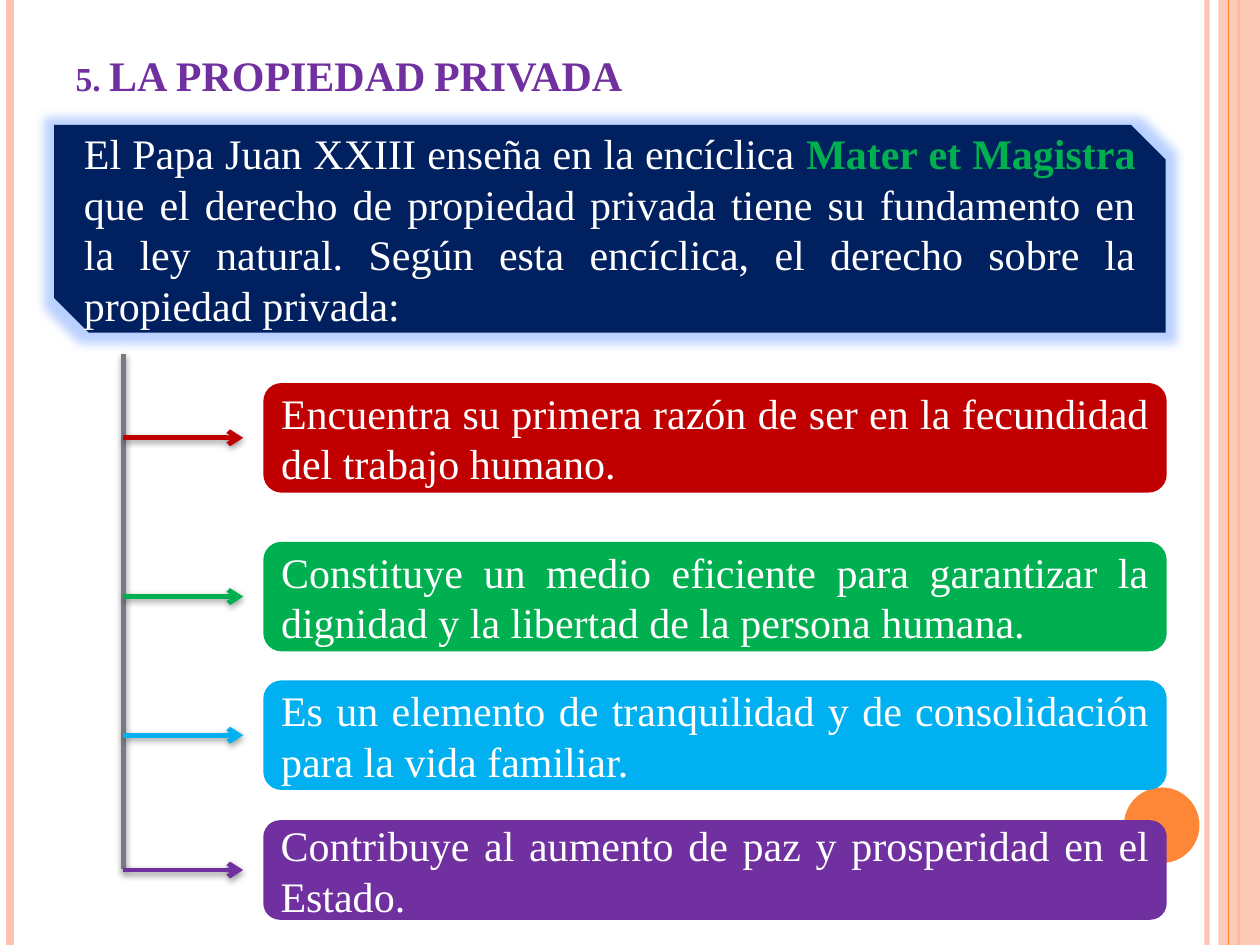
import pptx
import pptx.util
import pptx.dml.color
import pptx.enum.shapes
import pptx.enum.text
import pptx.oxml.ns
from lxml import etree

RGB = pptx.dml.color.RGBColor
FORM = pptx.enum.shapes.MSO_SHAPE
ALIGN = pptx.enum.text.PP_ALIGN
ANCHOR = pptx.enum.text.MSO_ANCHOR
Inches, Pt = pptx.util.Inches, pptx.util.Pt

PEACH = RGB(0xFE, 0xC3, 0xAE)
ORANGE = RGB(0xFE, 0x86, 0x37)
PURPLE = RGB(0x70, 0x30, 0xA0)
NAVY = RGB(0x00, 0x20, 0x60)
RED = RGB(0xC0, 0x00, 0x00)
GREEN = RGB(0x00, 0xB0, 0x50)
SKY = RGB(0x00, 0xB0, 0xF0)
GRAY = RGB(0x77, 0x7C, 0x84)
WHITE = RGB(0xFF, 0xFF, 0xFF)
BLACK = RGB(0x00, 0x00, 0x00)
GLOW = RGB(0x66, 0x99, 0xFF)

WIDE, HIGH = 10, 7.5
TRUNK, TIP = 0.98, 1.93
LEFT, SPAN = 2.09, 7.17
TOP, FOOT = 2.81, 6.9

# Top, height, colour and text of each point
POINTS = [
    (3.04, 0.87, RED, "Encuentra su primera razón de ser en la fecundidad del trabajo humano."),
    (4.3, 0.87, GREEN, "Constituye un medio eficiente para garantizar la dignidad y la libertad de la persona humana."),
    (5.4, 0.87, SKY, "Es un elemento de tranquilidad y de consolidación para la vida familiar."),
    (6.51, 0.79, PURPLE, "Contribuye al aumento de paz y prosperidad en el Estado."),
]
INTRO = [
    ("El Papa Juan XXIII enseña en la encíclica ", WHITE, False),
    ("Mater et Magistra ", GREEN, True),
    ("que el derecho de propiedad privada tiene su fundamento en la ley natural. "
     "Según esta encíclica, el derecho sobre la propiedad privada:", WHITE, False),
]


def node(up, tag, **attrs):
    """Add an XML child with the given attributes."""
    kid = etree.SubElement(up, pptx.oxml.ns.qn(tag))
    for name, value in attrs.items():
        kid.set(name, str(value))
    return kid


def fade(props, share):
    """Set the opacity, in percent, of the first colour found."""
    tint = next(props.iter(pptx.oxml.ns.qn("a:srgbClr")))
    node(tint, "a:alpha", val=share * 1000)


def effect(props, tag=None, color=BLACK, share=42, **attrs):
    """Add an effect list, empty unless a tag is given."""
    group = node(props, "a:effectLst")
    if tag:
        kind = node(group, tag, **attrs)
        node(kind, "a:srgbClr", val=color)
        fade(kind, share)


def write(par, text, color, bold=False):
    run = par.add_run()
    run.text = text
    style = {"name": "Times New Roman", "size": Pt(24), "bold": bold}
    for name, value in style.items():
        setattr(run.font, name, value)
    run.font.color.rgb = color
    return run


def block(slide, form, box, color, runs=()):
    """Add a filled shape with justified text."""
    shape = slide.shapes.add_shape(form, *map(Inches, box))
    shape.fill.solid()
    shape.fill.fore_color.rgb = color
    shape.line.fill.background()
    shape.shadow.inherit = False
    if runs:
        shape.text_frame.vertical_anchor = ANCHOR.MIDDLE
        par = shape.text_frame.paragraphs[0]
        par.alignment = ALIGN.JUSTIFY
        for run in runs:
            write(par, *run)
    return shape


def rule(slide, start, end, color, width, shade=False, arrow=False):
    """Add a straight line, with a shadow or an arrowhead if asked."""
    kind = pptx.enum.shapes.MSO_CONNECTOR.STRAIGHT
    line = slide.shapes.add_connector(kind, *map(Inches, start + end))
    line.line.color.rgb = color
    line.line.width = Pt(width)
    if arrow:
        node(line.line._get_or_add_ln(), "a:tailEnd", type="arrow")
    props = line._element.spPr
    if shade:
        effect(props, "a:outerShdw", blurRad=Pt(4), dist=Pt(1.6),
               dir=90 * 60000, rotWithShape=0)
    else:
        effect(props)
    return line


def stripe(slide, x, color, width):
    return rule(slide, (x, 0), (x, HIGH), color, width)


def frame(slide):
    """Draw the side stripes and the dot."""
    fade(stripe(slide, 9.58, PEACH, 3)._element, 93)
    stripe(slide, 0.08, PEACH, 4.5)
    stripe(slide, 9.83, ORANGE, 1.5)
    band = block(slide, FORM.RECTANGLE, (9.67, 0, 0.33, HIGH), PEACH)
    fade(band._element, 87)
    stripe(slide, 9.75, ORANGE, 0.75)
    block(slide, FORM.OVAL, (8.92, 6.25, 0.6, 0.6), ORANGE)


def head(slide):
    title = slide.shapes.title
    place = {"left": 0.5, "top": 0.3, "width": 4.66, "height": 0.54}
    for name, value in place.items():
        setattr(title, name, Inches(value))
    title.text_frame.vertical_anchor = ANCHOR.BOTTOM
    par = title.text_frame.paragraphs[0]
    par.alignment = ALIGN.LEFT
    run = write(par, "5. LA PROPIEDAD PRIVADA", PURPLE, True)
    run.font._element.set("cap", "small")


def main():
    deck = pptx.Presentation()
    deck.slide_width, deck.slide_height = Inches(WIDE), Inches(HIGH)
    slide = deck.slides.add_slide(deck.slide_layouts[5])
    frame(slide)
    head(slide)

    # Introduction with a glow in place of the empty effect list
    intro = block(slide, FORM.SNIP_2_DIAG_RECTANGLE, (0.43, 0.99, 8.82, 1.65), NAVY, INTRO)
    props = intro._element.spPr
    props.remove(props.find(pptx.oxml.ns.qn("a:effectLst")))
    effect(props, "a:glow", GLOW, 45, rad=Pt(11))

    # Points, then the trunk and its branches
    for top, high, color, text in POINTS:
        block(slide, FORM.ROUNDED_RECTANGLE, (LEFT, top, SPAN, high), color, [(text, WHITE)])
    rule(slide, (TRUNK, TOP), (TRUNK, FOOT), GRAY, 2.75, shade=True)
    for top, high, color, _ in POINTS:
        y = top + high / 2
        rule(slide, (TRUNK, y), (TIP, y), color, 2.75, shade=True, arrow=True)

    deck.save("out.pptx")


if __name__ == "__main__":
    main()
